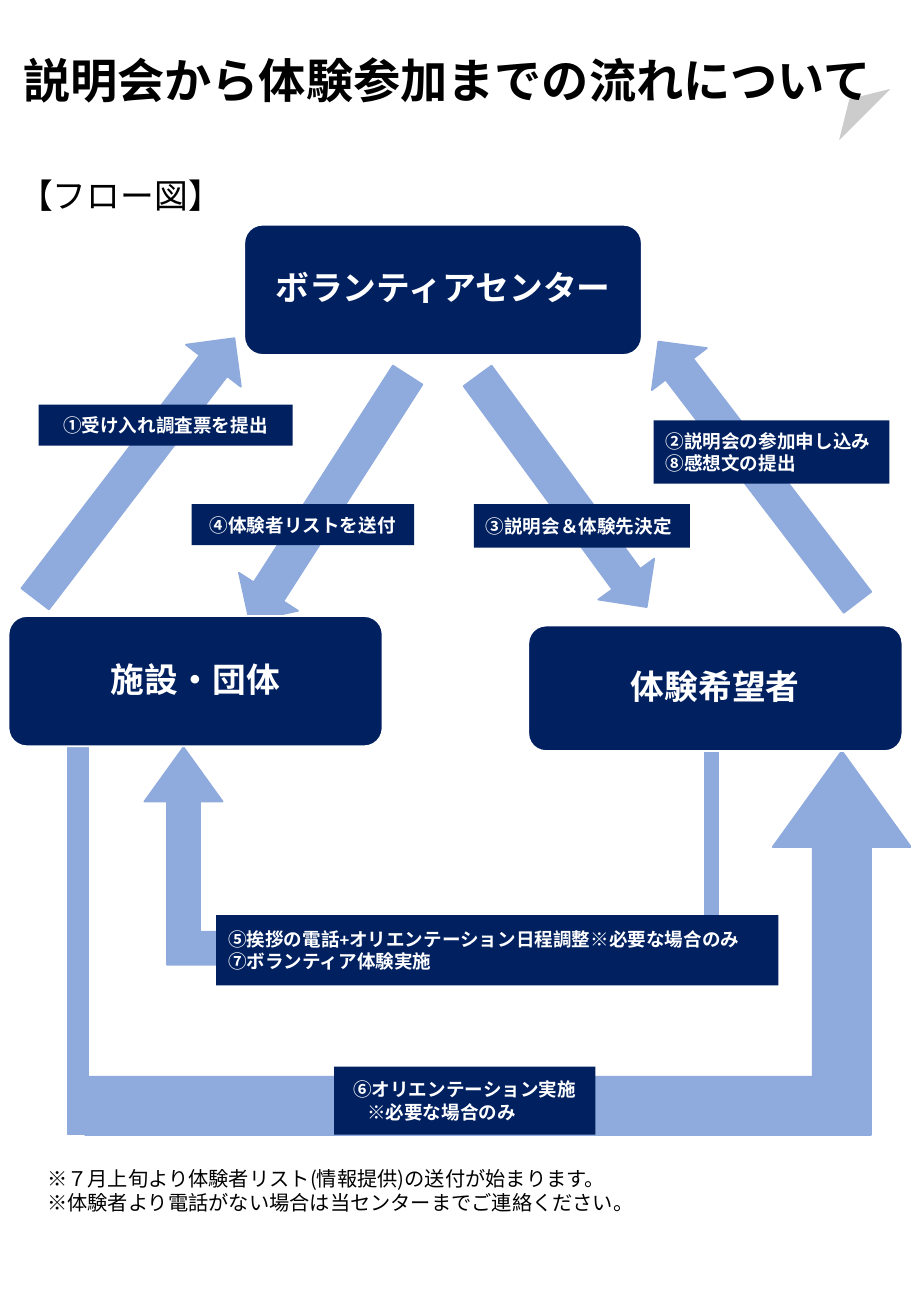
from dataclasses import dataclass

from lxml import etree
from pptx import Presentation
from pptx.dml.color import RGBColor
from pptx.enum.shapes import MSO_SHAPE
from pptx.enum.text import MSO_ANCHOR, PP_ALIGN
from pptx.oxml.ns import qn
from pptx.util import Cm, Pt

RECTANGLE = MSO_SHAPE.RECTANGLE
ROUNDED = MSO_SHAPE.ROUNDED_RECTANGLE
RIGHT_ARROW = MSO_SHAPE.RIGHT_ARROW
BENT_ARROW = MSO_SHAPE.BENT_UP_ARROW
FOLDED = MSO_SHAPE.FOLDED_CORNER
MIDDLE = MSO_ANCHOR.MIDDLE
LEFT, CENTER = PP_ALIGN.LEFT, PP_ALIGN.CENTER


@dataclass(frozen=True)
class Theme:
    navy: RGBColor = RGBColor(0x00, 0x20, 0x60)
    blue: RGBColor = RGBColor(0x8F, 0xAA, 0xDC)
    white: RGBColor = RGBColor(0xFF, 0xFF, 0xFF)
    black: RGBColor = RGBColor(0x00, 0x00, 0x00)
    latin: str = "Calibri"
    japanese: str = "Noto Sans CJK JP"
    title: int = 28
    heading: int = 20
    note: int = 12
    label: int = 11
    line: int = 1


@dataclass(frozen=True)
class Box:
    left: float
    top: float
    width: float
    height: float

    def inner(self, left, top, width, height):
        return Box(self.left + left, self.top + top, width, height)

    def lengths(self):
        return Cm(self.left), Cm(self.top), Cm(self.width), Cm(self.height)


THEME = Theme()


def add_shape(slide, kind, box, fill, line=None):
    shape = slide.shapes.add_shape(kind, *box.lengths())
    shape.shadow.inherit = False
    shape.fill.solid()
    shape.fill.fore_color.rgb = fill
    if line is None:
        shape.line.fill.background()
    else:
        shape.line.color.rgb = line
        shape.line.width = Pt(THEME.line)
    return shape


def adjust(shape, **values):
    geometry = shape._element.spPr.find(qn("a:prstGeom"))
    for guides in geometry.findall(qn("a:avLst")):
        geometry.remove(guides)
    guides = etree.SubElement(geometry, qn("a:avLst"))
    for name, value in values.items():
        guide = etree.SubElement(guides, qn("a:gd"))
        guide.set("name", name)
        guide.set("fmla", f"val {round(value * 100000)}")


def write(shape, lines, size, color, bold=True, align=LEFT, font=THEME.latin):
    frame = shape.text_frame
    frame.word_wrap = True
    frame.vertical_anchor = MIDDLE
    for index, line in enumerate(lines):
        paragraph = frame.add_paragraph() if index else frame.paragraphs[0]
        paragraph.alignment = align
        run = paragraph.add_run()
        run.text = line
        run.font.size = Pt(size)
        run.font.bold = bold
        run.font.name = font
        run.font.color.rgb = color
        east_asian = etree.SubElement(run.font._element, qn("a:ea"))
        east_asian.set("typeface", THEME.japanese)
    return frame


def add_title(slide, box):
    shape = add_shape(slide, FOLDED, box, THEME.white, THEME.white)
    adjust(shape, adj=0.5)
    frame = write(shape, ["説明会から体験参加までの流れについて"], THEME.title, THEME.black, align=CENTER)
    frame.margin_top = Cm(1)


def add_plain_text(slide, box, lines, size):
    shape = slide.shapes.add_textbox(*box.lengths())
    write(shape, lines, size, THEME.black, bold=False, font=THEME.japanese)


def add_straight_arrow(slide, box, rotation):
    shape = add_shape(slide, RIGHT_ARROW, box, THEME.blue, THEME.blue)
    shape.rotation = rotation


def add_return_path(slide, arrow_box, bar_box, flipped):
    arrow = add_shape(slide, BENT_ARROW, arrow_box, THEME.blue, THEME.blue)
    adjust(arrow, adj1=0.152, adj2=0.18, adj3=0.25)
    if flipped:
        arrow._element.spPr.find(qn("a:xfrm")).set("flipH", "1")
    add_shape(slide, RECTANGLE, bar_box, THEME.blue, THEME.blue)


def add_node(slide, box, name):
    shape = add_shape(slide, ROUNDED, box, THEME.navy, THEME.white)
    adjust(shape, adj=0.14)
    frame = write(shape, [name], THEME.heading, THEME.white, align=CENTER)
    frame.paragraphs[0].line_spacing = 0.9


def add_label(slide, box, lines, align=LEFT):
    shape = add_shape(slide, RECTANGLE, box, THEME.navy)
    return write(shape, lines, THEME.label, THEME.white, align=align)


def add_flow(slide, box):
    arrows = [
        ((8.58, 4.85, 5.99, 1.45), 53.8),
        ((12.24, 4.44, 6.86, 1.45), 232.6),
        ((3.63, 4.98, 6.12, 1.47), 122.7),
        ((-0.79, 4.37, 6.86, 1.45), 307.4),
    ]
    for place, rotation in arrows:
        add_straight_arrow(slide, box.inner(*place), rotation)

    paths = [
        ((2.84, 10.92, 11.76, 4.55), (14.55, 10.92, 0.3, 4.55), True),
        ((1.6, 11, 17.27, 8.03), (1.24, 10.41, 0.43, 8.61), False),
    ]
    for arrow, bar, flipped in paths:
        add_return_path(slide, box.inner(*arrow), box.inner(*bar), flipped)

    nodes = [
        ((4.93, 0, 8.31, 2.72), "ボランティアセンター"),
        ((0, 8.18, 7.82, 2.72), "施設・団体"),
        ((10.87, 8.38, 7.82, 2.62), "体験希望者"),
    ]
    for place, name in nodes:
        add_node(slide, box.inner(*place), name)

    labels = [
        ((0.63, 3.76, 5.31, 0.86), ["①受け入れ調査票を提出"], CENTER),
        ((13.49, 4.09, 4.93, 1.32), ["②説明会の参加申し込み", "⑧感想文の提出"], LEFT),
        ((9.73, 5.84, 4.52, 0.91), ["③説明会＆体験先決定"], LEFT),
        ((3.83, 5.84, 4.65, 0.86), ["④体験者リストを送付"], CENTER),
        ((4.34, 14.43, 11.76, 1.47),
         ["⑤挨拶の電話+オリエンテーション日程調整※必要な場合のみ", "⑦ボランティア体験実施"], LEFT),
    ]
    for place, lines, align in labels:
        add_label(slide, box.inner(*place), lines, align)

    orientation = add_label(slide, box.inner(6.81, 17.6, 5.46, 1.42),
                            ["⑥オリエンテーション実施", "※必要な場合のみ"], CENTER)
    condition = orientation.paragraphs[1]
    condition.alignment = LEFT
    condition._p.get_or_add_pPr().set("marL", str(Cm(0.44)))


def main():
    presentation = Presentation()
    presentation.slide_width = Cm(19.05)
    presentation.slide_height = Cm(27.51)
    slide = presentation.slides.add_slide(presentation.slide_layouts[6])
    add_title(slide, Box(0, 0.64, 18.69, 2.36))
    add_plain_text(slide, Box(0.15, 3.4, 10.03, 1.37), ["【フロー図】"], THEME.heading)
    add_flow(slide, Box(0.18, 4.7, 18.87, 19.03))
    notes = ["※７月上旬より体験者リスト(情報提供)の送付が始まります。",
             "※体験者より電話がない場合は当センターまでご連絡ください。"]
    add_plain_text(slide, Box(0.74, 24.13, 13.03, 1.5), notes, THEME.note)
    presentation.save("out.pptx")


if __name__ == "__main__":
    main()
